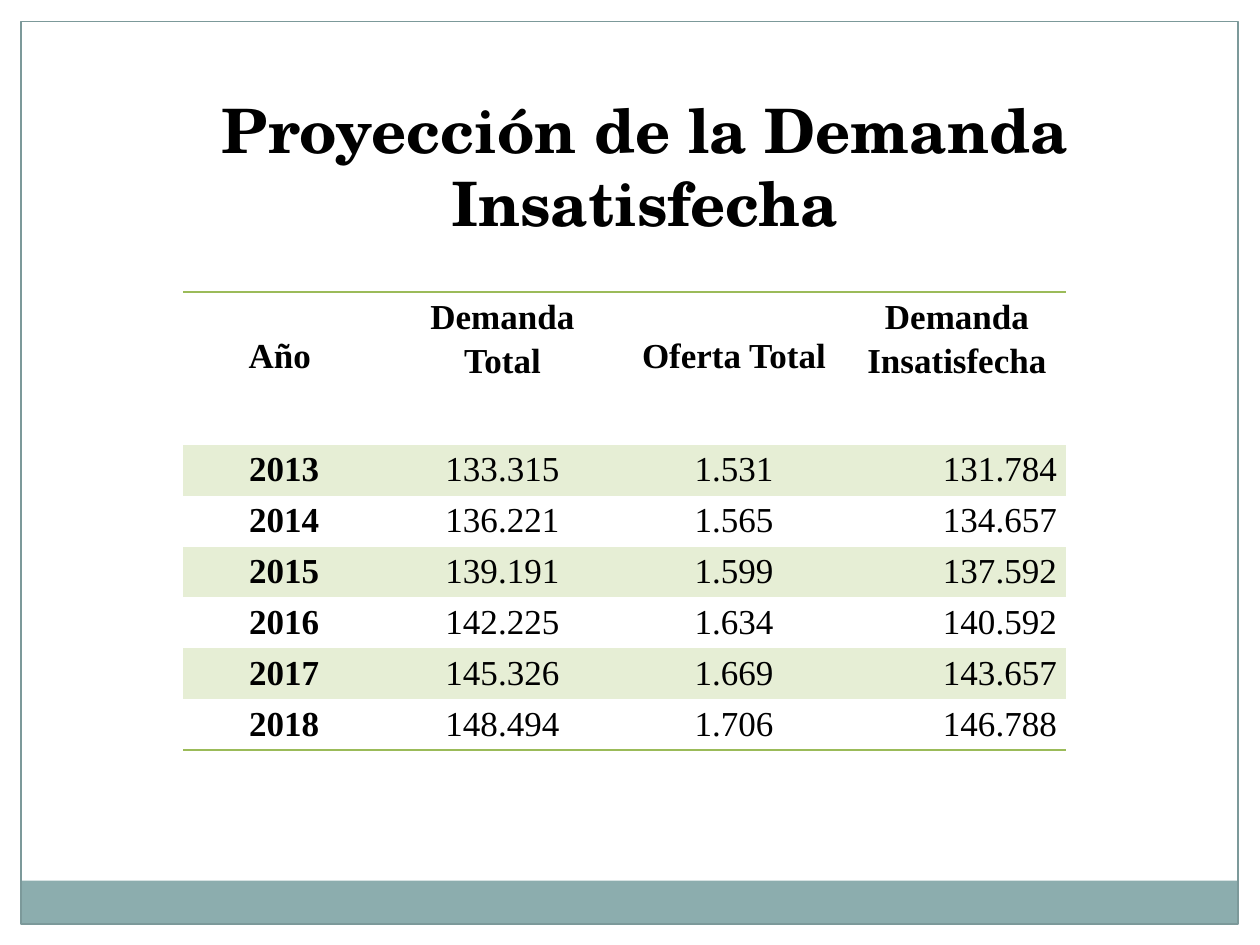
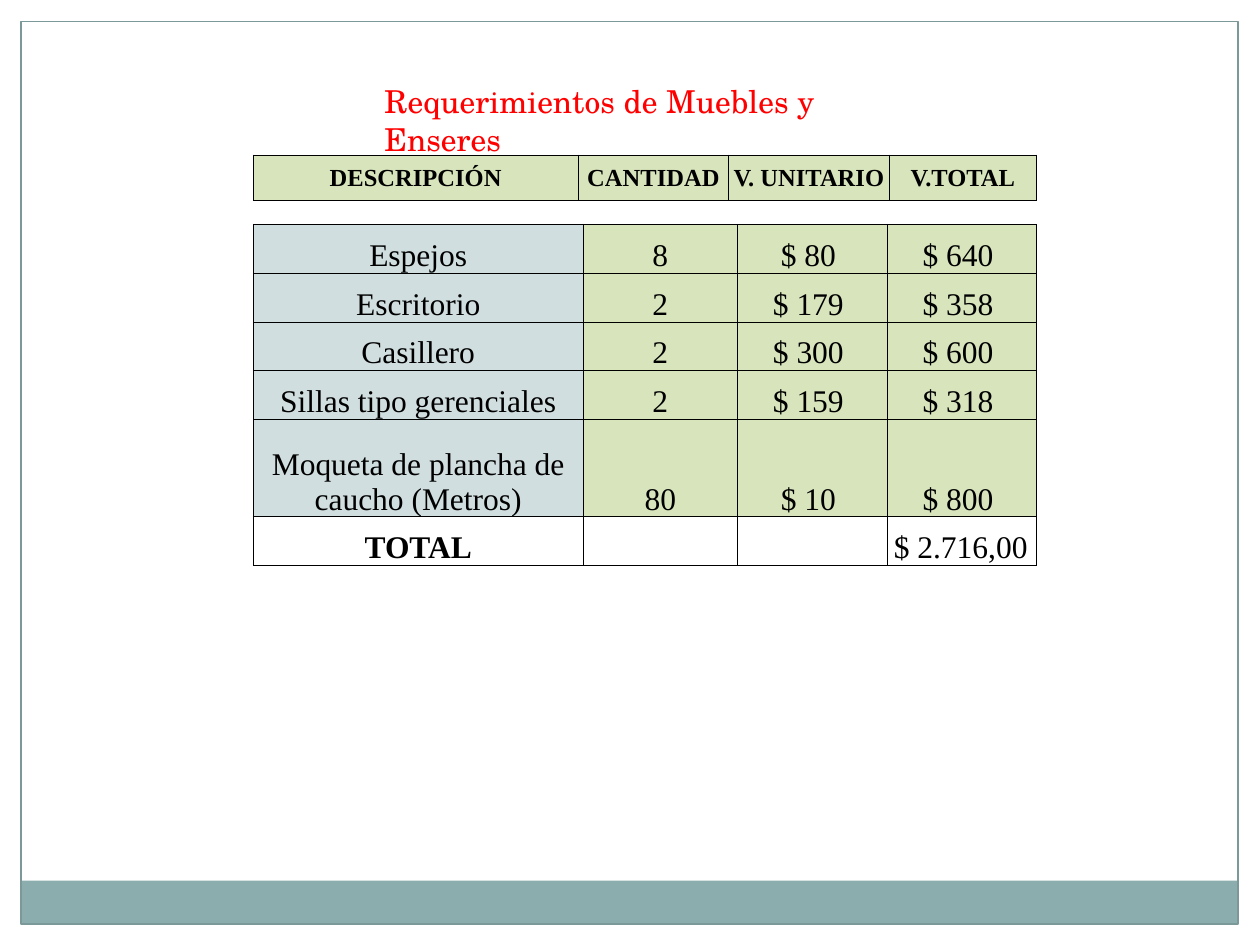
from dataclasses import dataclass

from lxml.etree import SubElement
from pptx import Presentation
from pptx.dml.color import RGBColor as Rgb
from pptx.enum.shapes import MSO_SHAPE as Preset
from pptx.enum.text import MSO_ANCHOR as Anchor, PP_ALIGN as Align
from pptx.oxml.ns import qn
from pptx.util import Pt


@dataclass(frozen=True)
class Theme:
    margin: str = "FFFFFF"
    band: str = "8CADAE"
    frame: str = "7C999A"
    ink: str = "000000"
    accent: str = "FF0000"
    rule: str = "9BBB59"
    stripe: str = "E6EED5"
    green: str = "D7E4BC"
    blue: str = "D1DEDF"
    display: str = "TeX Gyre Schola"
    body: str = "Times New Roman"
    title: int = 35
    figures: int = 20
    text: int = 18
    heading: int = 14


theme = Theme()


def write_text(holder, text, *, size=theme.text, font=theme.body, color=theme.ink,
               bold=False, align=Align.CENTER, spacing=1.0):
    """Put one formatted paragraph into a text box or a table cell."""
    para = holder.text_frame.paragraphs[0]
    para.alignment = align
    para.line_spacing = spacing
    span = para.add_run()
    span.text = text
    span.font.size = Pt(size)
    span.font.name = font
    span.font.bold = bold
    span.font.color.rgb = Rgb.from_string(color)


def add_grid(page, left, top, widths, heights, *, line, weight, boxed, anchor, inset):
    """Add an unfilled table, ruled round every cell or only above and below the whole."""
    table = page.shapes.add_table(len(heights), len(widths), Pt(left), Pt(top),
                                  Pt(sum(widths)), Pt(sum(heights))).table
    table.first_row = table.horz_banding = False
    for column, width in zip(table.columns, widths):
        column.width = Pt(width)
    for index, (row, height) in enumerate(zip(table.rows, heights)):
        row.height = Pt(height)
        outer = {"T": index == 0, "B": index == len(heights) - 1}
        for cell in row.cells:
            cell.vertical_anchor = anchor
            cell.margin_left = cell.margin_right = Pt(inset)
            cell.margin_top = cell.margin_bottom = 0
            properties = cell._tc.get_or_add_tcPr()
            for side in "LRTB":
                edge = SubElement(properties, qn(f"a:ln{side}"), w=str(Pt(weight)))
                if boxed or outer.get(side):
                    paint = SubElement(edge, qn("a:solidFill"))
                    SubElement(paint, qn("a:srgbClr"), val=line)
                else:
                    SubElement(edge, qn("a:noFill"))
            cell.fill.background()
    return table


deck = Presentation()
deck.slide_width, deck.slide_height = Pt(720), Pt(540)
blank = deck.slide_layouts[6]
demand_page, furniture_page = [deck.slides.add_slide(blank) for _ in range(2)]

# Shared margins, band and frame
backdrop = [
    ((0, 0, 720, 12), theme.margin),
    ((708, 0, 12, 540), theme.margin),
    ((0, 0, 12, 540), theme.margin),
    ((11.8, 503.3, 695.5, 24.5), theme.band),
]
for page in (demand_page, furniture_page):
    for place, color in backdrop:
        panel = page.shapes.add_shape(Preset.RECTANGLE, *map(Pt, place))
        panel.shadow.inherit = False
        panel.fill.solid()
        panel.fill.fore_color.rgb = Rgb.from_string(color)
        panel.line.fill.background()
    frame = page.shapes.add_shape(Preset.RECTANGLE, Pt(12), Pt(12.2), Pt(695.5), Pt(515.9))
    frame.shadow.inherit = False
    frame.fill.background()
    frame.line.color.rgb = Rgb.from_string(theme.frame)
    frame.line.width = Pt(0.75)

# Titles
titles = [
    (demand_page, (70.8, 48.5, 595.4, 92), "Proyección de la Demanda Insatisfecha",
     dict(size=theme.title, bold=True), Anchor.MIDDLE),
    (furniture_page, (212.6, 43.2, 321, 29), "Requerimientos de Muebles y Enseres",
     dict(color=theme.accent, align=Align.LEFT), Anchor.TOP),
]
for page, place, text, look, anchor in titles:
    box = page.shapes.add_textbox(*map(Pt, place))
    box.text_frame.word_wrap = True
    box.text_frame.vertical_anchor = anchor
    write_text(box, text, font=theme.display, **look)

# Projected unmet demand
demand_headings = ["Año ", "Demanda Total", "Oferta Total", "Demanda Insatisfecha"]
demand_rows = [
    ["2013", "133.315", "1.531", "131.784"],
    ["2014", "136.221", "1.565", "134.657"],
    ["2015", "139.191", "1.599", "137.592"],
    ["2016", "142.225", "1.634", "140.592"],
    ["2017", "145.326", "1.669", "143.657"],
    ["2018", "148.494", "1.706", "146.788"],
]
demand = add_grid(demand_page, 104.8, 167, [115.1, 134.5, 130.2, 124.6],
                  [87.2] + [29.08] * len(demand_rows), line=theme.rule, weight=1,
                  boxed=False, anchor=Anchor.TOP, inset=5.2)
for column, text in enumerate(demand_headings):
    cell = demand.cell(0, column)
    if column in (0, 2):
        cell.margin_top = Pt(22.5)
    write_text(cell, text, size=theme.figures, bold=True, spacing=1.15)
for row, texts in enumerate(demand_rows, start=1):
    for column, text in enumerate(texts):
        cell = demand.cell(row, column)
        if row % 2:
            cell.fill.solid()
            cell.fill.fore_color.rgb = Rgb.from_string(theme.stripe)
        write_text(cell, text, size=theme.figures, bold=column == 0, spacing=1.15,
                   align=Align.RIGHT if column == 3 else Align.CENTER)

# Furniture and fittings
furniture_headings = ["DESCRIPCIÓN", "CANTIDAD", "V. UNITARIO", "V.TOTAL"]
furniture_rows = [
    ["Espejos", "8", "$ 80 ", "$ 640 "],
    ["Escritorio", "2", "$ 179 ", "$ 358 "],
    ["Casillero", "2", "$ 300 ", "$ 600 "],
    ["Sillas tipo gerenciales", "2", "$ 159 ", "$ 318 "],
    ["Moqueta de plancha de caucho (Metros)", "80", "$ 10 ", "$ 800 "],
    ["TOTAL", "", "", "$ 2.716,00 "],
]
boxed_look = dict(line=theme.ink, weight=0.5, boxed=True, inset=0.75)
furniture = add_grid(furniture_page, 144.7, 128.2, [188.6, 88.1, 85.6, 85.5],
                     [27.88] * 4 + [55.7, 27.88], anchor=Anchor.BOTTOM, **boxed_look)
total_row = len(furniture_rows) - 1
for row, texts in enumerate(furniture_rows):
    for column, text in enumerate(texts):
        cell = furniture.cell(row, column)
        is_total = row == total_row
        if not is_total:
            cell.fill.solid()
            cell.fill.fore_color.rgb = Rgb.from_string(theme.green if column else theme.blue)
        if text:
            write_text(cell, text, bold=is_total and column == 0,
                       align=Align.RIGHT if is_total and column == 3 else Align.CENTER)

heading_grid = add_grid(furniture_page, 144.7, 88.6, [185.7, 86, 91.8, 84.2], [25.9],
                        anchor=Anchor.MIDDLE, **boxed_look)
for cell, text in zip(heading_grid.rows[0].cells, furniture_headings):
    cell.fill.solid()
    cell.fill.fore_color.rgb = Rgb.from_string(theme.green)
    write_text(cell, text, size=theme.heading, bold=True)

deck.save("out.pptx")
